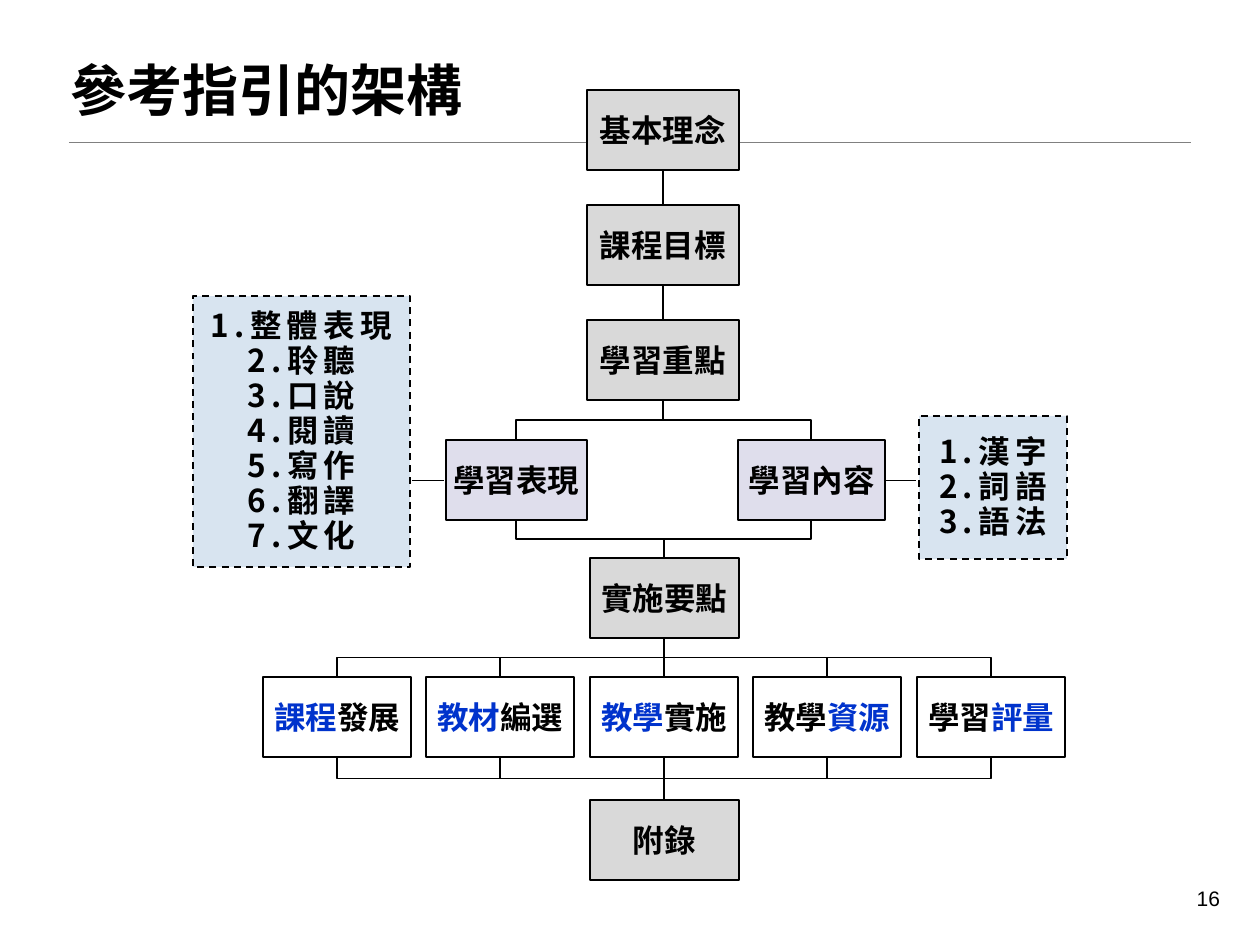
"""Builds the slide showing the structure of the reference guide."""
from lxml import etree
from pptx import Presentation
from pptx.dml.color import RGBColor
from pptx.enum.dml import MSO_LINE
from pptx.enum.shapes import MSO_CONNECTOR, MSO_SHAPE
from pptx.enum.text import MSO_ANCHOR, PP_ALIGN
from pptx.oxml.ns import qn
from pptx.util import Emu, Inches, Pt

STRAIGHT, ELBOW = MSO_CONNECTOR.STRAIGHT, MSO_CONNECTOR.ELBOW
RECT, ROUNDED = MSO_SHAPE.RECTANGLE, MSO_SHAPE.ROUNDED_RECTANGLE
LEFT, CENTER, RIGHT = PP_ALIGN.LEFT, PP_ALIGN.CENTER, PP_ALIGN.RIGHT
MIDDLE, TOP = MSO_ANCHOR.MIDDLE, MSO_ANCHOR.TOP
DASH = MSO_LINE.DASH

CJK = "Noto Sans CJK SC"
BLACK, BLUE, WHITE = "000000", "0033CC", "FFFFFF"
GREY, LILAC, PALE = "D9D9D9", "DFDEEC", "D8E4F0"
LABEL = {"name": CJK, "size": Pt(18), "bold": True}
TITLE = {"name": "Arial", "size": Pt(32), "bold": True}
NUMBER = {"name": "Arial", "size": Pt(12)}
BOX_H = 80


def px(n):
    """Turn pixels at 126 to the inch into EMU."""
    return Emu(round(n * 914400 / 126))


def rgb(value):
    """Make a colour from a hex string."""
    return RGBColor.from_string(value)


def write(tf, lines, font, align, spacing=None, tracking=0):
    """Fill a frame with lines, each a list of (text, colour) runs."""
    for i, runs in enumerate(lines):
        p = tf.paragraphs[0] if i == 0 else tf.add_paragraph()
        p.alignment = align
        if spacing:
            p.line_spacing = spacing
        for text, color in runs:
            r = p.add_run()
            r.text = text
            for key, value in font.items():
                setattr(r.font, key, value)
            r.font.color.rgb = rgb(color)
            rPr = r.font._element
            etree.SubElement(rPr, qn("a:ea")).set("typeface", CJK)
            if tracking:
                rPr.set("spc", str(tracking))


def add_text(s, box, text, font, align, spacing=None):
    """Add a text box holding one line."""
    tf = s.shapes.add_textbox(*map(px, box)).text_frame
    tf.word_wrap = True
    tf.vertical_anchor = TOP
    write(tf, [[(text, BLACK)]], font, align, spacing)
    return tf


def add_panel(s, kind, box, fill):
    """Add a filled shape with a black outline."""
    sp = s.shapes.add_shape(kind, *map(px, box))
    sp.shadow.inherit = False
    sp.fill.solid()
    sp.fill.fore_color.rgb = rgb(fill)
    sp.line.color.rgb = rgb(BLACK)
    sp.line.width = Pt(1)
    sp.text_frame.vertical_anchor = MIDDLE
    return sp


def add_node(s, box, runs, fill):
    """Add a square-cornered chart box and return its bounds."""
    sp = add_panel(s, ROUNDED, box, fill)
    sp.adjustments[0] = 0
    tf = sp.text_frame
    for side in ("left", "top", "right", "bottom"):
        setattr(tf, f"margin_{side}", 0)
    write(tf, [runs], LABEL, CENTER)
    return box


def add_list(s, box, items):
    """Add a dashed panel with numbered items."""
    sp = add_panel(s, RECT, box, PALE)
    sp.line.dash_style = DASH
    sp.text_frame.word_wrap = False
    lines = [[(f"{n}.{item}", BLACK)] for n, item in enumerate(items, 1)]
    write(sp.text_frame, lines, LABEL, CENTER, Pt(20), 300)


def add_line(s, kind, points, width, color=BLACK):
    """Add a connector without a shadow."""
    cxn = s.shapes.add_connector(kind, *map(px, points))
    cxn.line.color.rgb = rgb(color)
    cxn.line.width = Pt(width)
    etree.SubElement(cxn._element.spPr, qn("a:effectLst"))
    return cxn


def link(s, upper, lower):
    """Join the bottom of one box to the top of another."""
    x1, y1 = upper[0] + upper[2] // 2, upper[1] + upper[3]
    x2, y2 = lower[0] + lower[2] // 2, lower[1]
    if x1 == x2:
        add_line(s, STRAIGHT, (x1, y1, x2, y2), 1)
        return
    run, drop = abs(x2 - x1), y2 - y1
    left, top = (x1 + x2 - drop) / 2, (y1 + y2 - run) / 2
    ends, angle = (left, left + drop), 90
    if x2 > x1:
        ends, angle = ends[::-1], 270
    cxn = add_line(s, ELBOW, (ends[0], top, ends[1], top + run), 1)
    cxn._element.spPr.find(qn("a:xfrm")).set("rot", str(angle * 60000))


def main():
    """Build and save the slide."""
    prs = Presentation()
    prs.slide_width, prs.slide_height = Inches(10), Inches(7.5)
    s = prs.slides.add_slide(prs.slide_layouts[6])

    add_line(s, STRAIGHT, (69, 142, 1191, 142), 0.25, "808080")
    tf = add_text(s, (1166, 881, 63, 50), "16", NUMBER, RIGHT)
    tf.margin_left = tf.margin_right = px(9)
    tf.margin_top = tf.margin_bottom = px(5)

    trunk = [add_node(s, (587, 90 + 115 * i, 152, BOX_H), [(text, BLACK)], GREY)
             for i, text in enumerate(("基本理念", "課程目標", "學習重點"))]
    focus = [add_node(s, (x, 440, w, BOX_H), [(text, BLACK)], LILAC)
             for x, w, text in ((446, 141, "學習表現"), (738, 147, "學習內容"))]
    hub, appendix = [add_node(s, (590, y, 149, BOX_H), [(text, BLACK)], GREY)
                     for y, text in ((558, "實施要點"), (800, "附錄"))]
    topics = (
        (("課程", BLUE), ("發展", BLACK)),
        (("教材", BLUE), ("編選", BLACK)),
        (("教學", BLUE), ("實施", BLACK)),
        (("教學", BLACK), ("資源", BLUE)),
        (("學習", BLACK), ("評量", BLUE)),
    )
    parts = [add_node(s, (263 + 327 * i // 2, 677, 148, BOX_H), runs, WHITE)
             for i, runs in enumerate(topics)]

    for upper, lower in zip(trunk, trunk[1:]):
        link(s, upper, lower)
    for source, row, target in ((trunk[-1], focus, hub), (hub, parts, appendix)):
        for box in row:
            link(s, source, box)
            link(s, box, target)

    add_list(s, (193, 296, 217, 271),
             ("整體表現", "聆聽", "口說", "閱讀", "寫作", "翻譯", "文化"))
    add_list(s, (919, 416, 148, 143), ("漢字", "詞語", "語法"))
    for x1, x2 in ((412, 444), (884, 916)):
        add_line(s, STRAIGHT, (x1, 480, x2, 480), 0.5)

    add_text(s, (58, 57, 1121, 141), "參考指引的架構", TITLE, LEFT, 0.9)
    prs.save("out.pptx")


if __name__ == "__main__":
    main()
